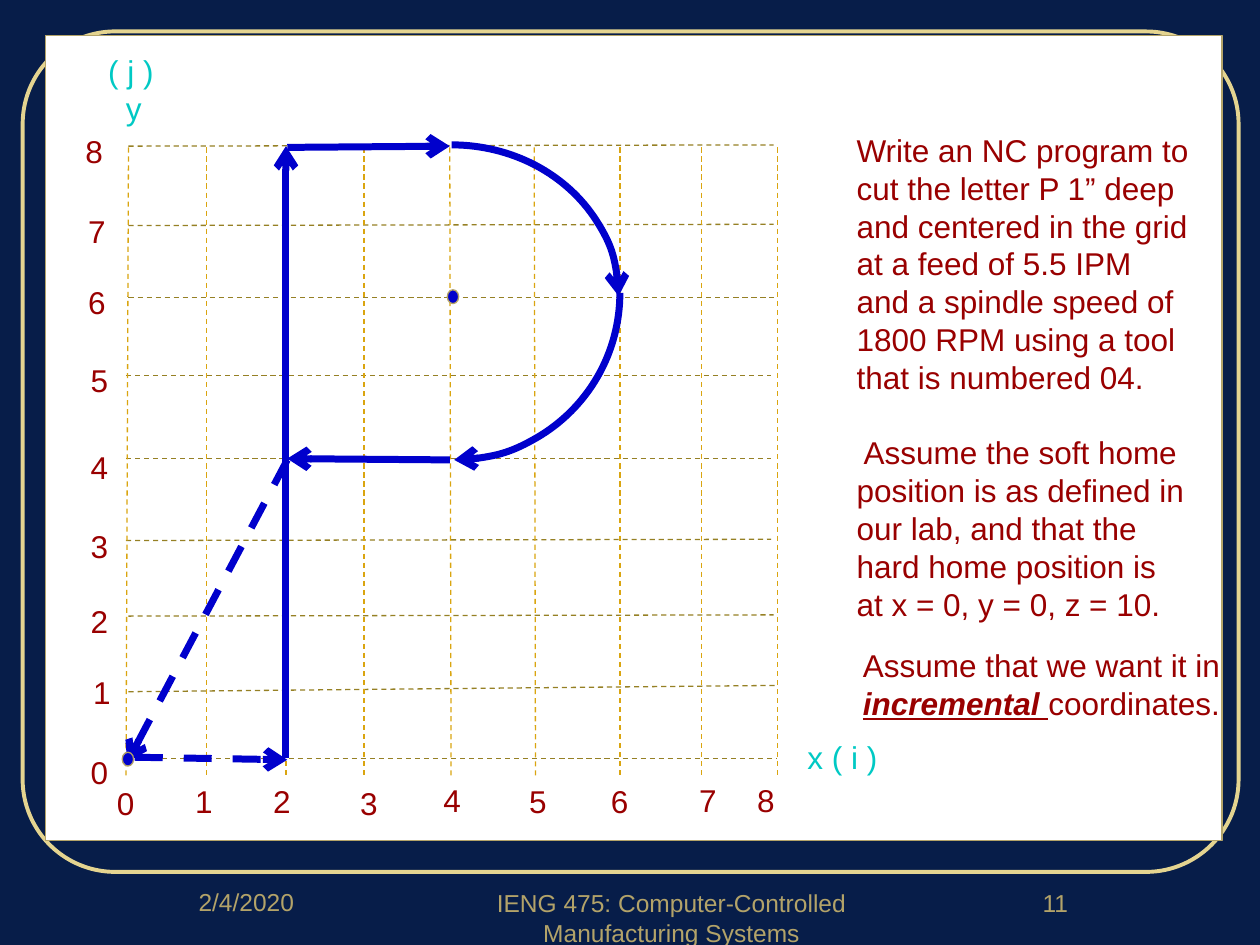
from lxml.etree import SubElement
from pptx import Presentation
from pptx.dml.color import RGBColor
from pptx.enum.dml import MSO_LINE
from pptx.enum.shapes import MSO_CONNECTOR, MSO_SHAPE
from pptx.enum.text import PP_ALIGN
from pptx.oxml.ns import qn
from pptx.util import Inches, Pt

NAVY = RGBColor(0x07, 0x1D, 0x49)
GOLD = RGBColor(0xB3, 0xA3, 0x69)
PALE_GOLD = RGBColor(0xE4, 0xD4, 0x90)
WHITE = RGBColor(0xFF, 0xFF, 0xFF)
OLIVE = RGBColor(0x96, 0x80, 0x24)
AMBER = RGBColor(0xDA, 0xA5, 0x10)
BLUE = RGBColor(0x00, 0x00, 0xCC)
RED = RGBColor(0x99, 0x00, 0x00)
CYAN = RGBColor(0x00, 0xC9, 0xC4)

GRID_TOP, GRID_BOTTOM = 1.17, 6.17
GRID_COLUMNS = [(1.02, 1), (1.64, 1.64), (2.27, 2.27), (2.89, 2.89), (3.57, 3.58),
                (4.24, 4.25), (4.92, 4.92), (5.57, 5.57), (6.17, 6.17)]
GRID_ROWS = [(1, 6.02, 6.17, 6.02), (1.02, 5.49, 6.17, 5.44), (1.02, 4.89, 6.14, 4.88),
             (1, 4.29, 6.12, 4.28), (1, 3.64, 6.12, 3.64), (1, 2.98, 6.12, 2.98),
             (1.02, 2.36, 6.14, 2.36), (1.02, 1.79, 6.14, 1.78), (1.02, 1.16, 6.14, 1.15)]
X_LABELS = [(0.83, 6.17), (1.45, 6.16), (2.07, 6.16), (2.76, 6.17), (3.42, 6.15),
            (4.1, 6.16), (4.75, 6.16), (5.45, 6.15), (5.91, 6.15)]
Y_LABELS = [(0.62, 5.93), (0.64, 5.29), (0.62, 4.73), (0.62, 4.13), (0.62, 3.51),
            (0.62, 2.82), (0.6, 2.2), (0.6, 1.63), (0.58, 1)]
TOOL_MOVES = [(1.07, 6.01, 2.28, 6.03, True), (2.27, 6.02, 2.27, 1.16, False),
              (2.28, 1.17, 3.57, 1.16, False), (3.57, 3.65, 2.28, 3.64, False),
              (2.28, 3.65, 1.01, 6.05, True)]
TASK = ("Write an NC program to cut the letter P 1” deep and centered in the grid at a feed of "
        "5.5 IPM and a spindle speed of 1800 RPM using a tool that is numbered 04.")
HOME = (" Assume the soft home position is as defined in our lab, and that the hard home "
        "position is at x = 0, y = 0, z = 10.")


def set_line(line, color, width, dashed=False, arrow=False):
    """Style an outline, with an optional dash and end arrow."""
    line.color.rgb = color
    line.width = Pt(width)
    if dashed:
        line.dash_style = MSO_LINE.DASH
    if arrow:
        SubElement(line._get_or_add_ln(), qn("a:tailEnd"), type="arrow")


def add_line(slide, ends, color, width, dashed=False, arrow=False):
    """Draw a straight line between two points."""
    line = slide.shapes.add_connector(MSO_CONNECTOR.STRAIGHT, *map(Inches, ends))
    set_line(line.line, color, width, dashed, arrow)
    SubElement(line._element.spPr, qn("a:effectLst"))


def add_shape(slide, kind, frame, line_color, width, fill=None, arrow=False):
    """Draw a preset shape and return it."""
    shape = slide.shapes.add_shape(kind, *map(Inches, frame))
    shape.shadow.inherit = False
    if fill is None:
        shape.fill.background()
    else:
        shape.fill.solid()
        shape.fill.fore_color.rgb = fill
    set_line(shape.line, line_color, width, arrow=arrow)
    return shape


def add_span(para, text, color, size=18, marked=None):
    """Add one run; marked switches bold, italic and underline together."""
    span = para.add_run()
    span.text = text
    font = span.font
    font.name, font.size, font.color.rgb = "Arial", Pt(size), color
    font.bold = font.italic = font.underline = marked


def add_text(slide, frame, texts, color, size=18, align=None):
    """Add a wrapping text box with one paragraph per text and return its paragraphs."""
    box = slide.shapes.add_textbox(*map(Inches, frame))
    box.text_frame.word_wrap = True
    for index, text in enumerate(texts):
        para = box.text_frame.add_paragraph() if index else box.text_frame.paragraphs[0]
        para.alignment = align
        add_span(para, text, color, size)
    return box.text_frame.paragraphs


def add_frame(slide):
    """Draw the border, the footer and the white panel."""
    border = add_shape(slide, MSO_SHAPE.ROUNDED_RECTANGLE, (0.18, 0.25, 9.65, 6.67), PALE_GOLD, 2.25)
    border.adjustments[0] = 0.11
    footer = [((0.83, 6.99, 2.25, 0.5), "2/4/2020"),
              ((3.58, 7, 3.5, 0.5), "IENG 475: Computer-Controlled Manufacturing Systems"),
              ((7.5, 7, 1.75, 0.5), "11")]
    for frame, text in footer:
        add_text(slide, frame, [text], GOLD, 14, PP_ALIGN.CENTER)
    add_shape(slide, MSO_SHAPE.RECTANGLE, (0.36, 0.28, 9.34, 6.39), GOLD, 0.75, WHITE)


def add_grid(slide):
    """Draw the dashed grid with its numbers and axis names."""
    for ends in GRID_ROWS:
        add_line(slide, ends, OLIVE, 0.75, dashed=True)
    for top_x, bottom_x in GRID_COLUMNS:
        add_line(slide, (top_x, GRID_TOP, bottom_x, GRID_BOTTOM), AMBER, 0.75, dashed=True)
    for labels in (X_LABELS, Y_LABELS):
        for number, (left, top) in enumerate(labels):
            add_text(slide, (left, top, 0.38, 0.4), [str(number)], RED)
    add_text(slide, (6.31, 5.81, 1.06, 0.4), ["x ( i )"], CYAN)
    y_name = add_text(slide, (0.76, 0.36, 1.06, 0.71), ["( j )", "y"], CYAN)[1]
    y_name._p.get_or_add_pPr().set("marL", str(Inches(0.14)))


def add_tool_route(slide):
    """Draw the letter's moves, arcs, start point and arc centre."""
    for *ends, dashed in TOOL_MOVES:
        add_line(slide, ends, BLUE, 4, dashed, arrow=True)
    add_shape(slide, MSO_SHAPE.ARC, (2.26, 1.15, 2.65, 2.4), BLUE, 4, arrow=True)
    lower_arc = add_shape(slide, MSO_SHAPE.ARC, (2.29, 1, 2.63, 2.65), BLUE, 4, arrow=True)
    lower_arc.adjustments[0], lower_arc.adjustments[1] = 0, 54
    for left, top in ((0.97, 5.97), (3.55, 2.3)):
        add_shape(slide, MSO_SHAPE.OVAL, (left, top, 0.09, 0.11), GOLD, 0.75, BLUE)


def add_task(slide):
    """Write the exercise beside the grid."""
    home = add_text(slide, (6.7, 0.99, 2.85, 4.04), [TASK, HOME], RED)[1]
    home.space_before = Pt(21.6)
    wish = add_text(slide, (6.75, 5.08, 3.07, 0.71), ["Assume that we want it in"], RED)[0]
    add_span(wish, " incremental ", RED, marked=True)
    add_span(wish, "coordinates.", RED, marked=False)


def main():
    """Build the slide and save the deck."""
    deck = Presentation()
    deck.slide_width, deck.slide_height = Inches(10), Inches(7.5)
    slide = deck.slides.add_slide(deck.slide_layouts[6])
    slide.background.fill.solid()
    slide.background.fill.fore_color.rgb = NAVY
    add_frame(slide)
    add_grid(slide)
    add_task(slide)
    add_tool_route(slide)
    deck.save("out.pptx")


if __name__ == "__main__":
    main()
